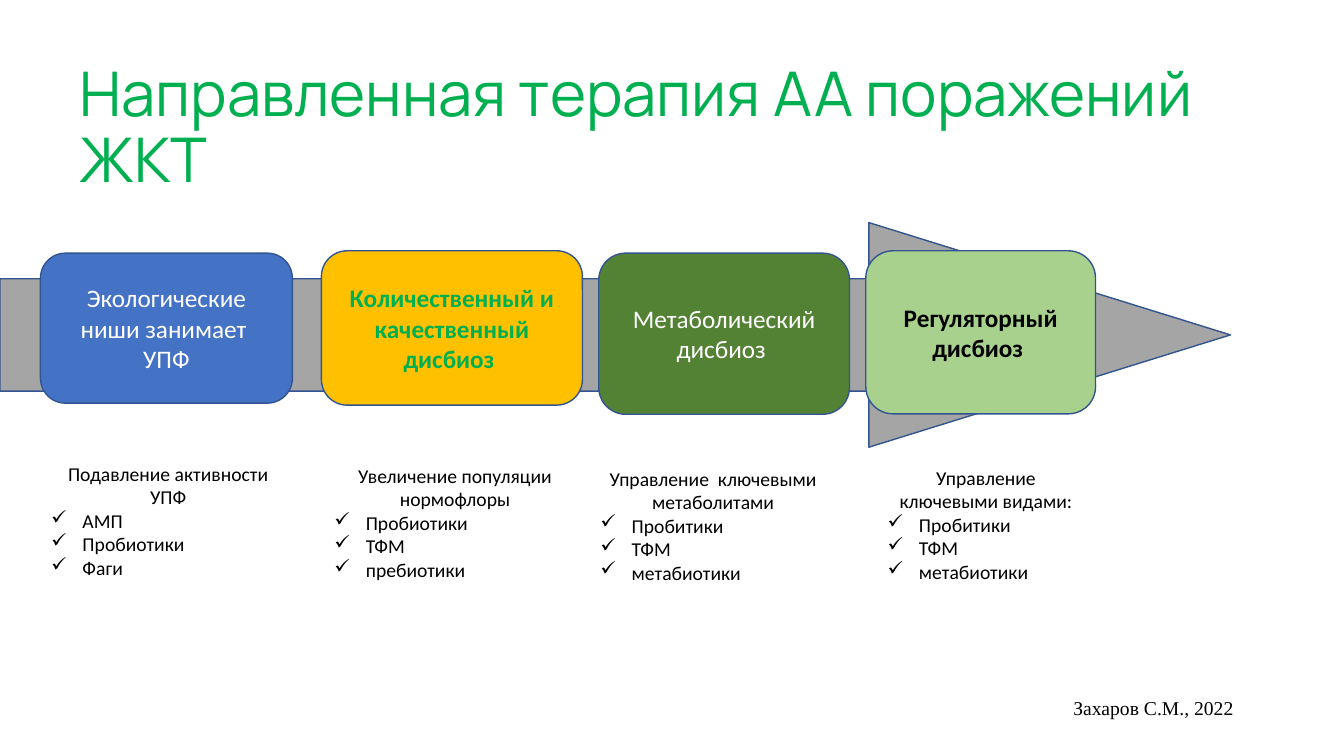
from dataclasses import dataclass

import pptx
import pptx.dml.color
import pptx.enum.shapes
import pptx.enum.text
import pptx.oxml
import pptx.oxml.ns
import pptx.util
from pptx.util import Cm

SHAPE = pptx.enum.shapes.MSO_SHAPE
ALIGN = pptx.enum.text.PP_ALIGN
ANCHOR = pptx.enum.text.MSO_ANCHOR
FIT = pptx.enum.text.MSO_AUTO_SIZE


@dataclass(frozen=True)
class Theme:
    green: str = "00B050"
    black: str = "000000"
    white: str = "FFFFFF"
    gray: str = "A5A5A5"
    outline: str = "325491"
    blue: str = "4472C4"
    amber: str = "FFC000"
    forest: str = "548235"
    mint: str = "A9D18E"
    title_size: int = 44
    stage_size: int = 18
    body_size: int = 14
    title_font: str = "Manrope"
    body_font: str = "Calibri"
    author_font: str = "Times New Roman"


THEME = Theme()

STAGES = [
    ((1.02, 6.38, 6.35, 3.78), THEME.blue, THEME.white, False,
     "Экологические ниши занимает  УПФ"),
    ((8.1, 6.32, 6.58, 3.89), THEME.amber, THEME.green, True,
     "Количественный и качественный дисбиоз "),
    ((15.09, 6.38, 6.32, 4.06), THEME.forest, THEME.white, False,
     "Метаболический дисбиоз "),
    ((21.82, 6.32, 5.79, 4.11), THEME.mint, THEME.black, True,
     "Регуляторный дисбиоз "),
]

THERAPIES = [
    ((1.04, 11.51, 6.4, 3.25), ["Подавление активности УПФ"],
     ["АМП", "Пробиотики", "Фаги"]),
    ((8.18, 11.56, 6.58, 3.25), ["Увеличение популяции нормофлоры"],
     ["Пробиотики", "ТФМ", "пребиотики"]),
    ((14.88, 11.63, 6.3, 3.25), ["Управление  ключевыми ", "метаболитами "],
     ["Пробитики", "ТФМ", "метабиотики"]),
    ((22.12, 11.61, 5.46, 3.25), ["Управление ключевыми видами:"],
     ["Пробитики", "ТФМ", "метабиотики"]),
]


def rgb(code):
    return pptx.dml.color.RGBColor.from_string(code)


def add_span(para, text, size, color, font=THEME.body_font, bold=False):
    span = para.add_run()
    span.text = text
    span.font.size = pptx.util.Pt(size)
    span.font.name = font
    span.font.bold = bold
    span.font.color.rgb = rgb(color)


def add_shape(page, kind, place, fill):
    shape = page.shapes.add_shape(kind, *map(Cm, place))
    shape.shadow.inherit = False
    shape.fill.solid()
    shape.fill.fore_color.rgb = rgb(fill)
    shape.line.color.rgb = rgb(THEME.outline)
    shape.line.width = pptx.util.Pt(1)
    return shape


def add_text_box(page, place, wrap=True):
    frame = page.shapes.add_textbox(*map(Cm, place)).text_frame
    frame.word_wrap = wrap
    return frame


def add_title(page):
    frame = add_text_box(page, (1.75, 1.42, 29.21, 3.68))
    frame.vertical_anchor = ANCHOR.MIDDLE
    para = frame.paragraphs[0]
    para.line_spacing = 0.9
    add_span(para, "Направленная терапия АА поражений ЖКТ",
             THEME.title_size, THEME.green, THEME.title_font)


def add_arrow(page):
    arrow = add_shape(page, SHAPE.RIGHT_ARROW, (0, 5.61, 31.01, 5.66), THEME.gray)
    arrow.adjustments[0] = 0.5
    arrow.adjustments[1] = 1.61


def add_stage(page, place, fill, color, bold, text):
    box = add_shape(page, SHAPE.ROUNDED_RECTANGLE, place, fill)
    box.text_frame.word_wrap = True
    box.text_frame.vertical_anchor = ANCHOR.MIDDLE
    para = box.text_frame.paragraphs[0]
    para.alignment = ALIGN.CENTER
    add_span(para, text, THEME.stage_size, color, bold=bold)


def add_check_mark(para):
    properties = para._p.get_or_add_pPr()
    properties.set("marL", str(Cm(0.79)))
    properties.set("indent", str(-Cm(0.79)))
    bullet = pptx.oxml.parse_xml(
        f'<a:buChar {pptx.oxml.ns.nsdecls("a")} char="✓"/>')
    properties.append(bullet)


def add_therapy(page, place, heading, remedies):
    frame = add_text_box(page, place)
    frame.auto_size = FIT.SHAPE_TO_FIT_TEXT
    for index, text in enumerate(heading + remedies):
        para = frame.add_paragraph() if index else frame.paragraphs[0]
        if index < len(heading):
            para.alignment = ALIGN.CENTER
        else:
            add_check_mark(para)
        add_span(para, text, THEME.body_size, THEME.black)


def add_author(page):
    frame = add_text_box(page, (26.8, 17.42, 4.7, 0.86), wrap=False)
    frame.auto_size = FIT.SHAPE_TO_FIT_TEXT
    add_span(frame.paragraphs[0], "Захаров С.М., 2022",
             THEME.body_size, THEME.black, THEME.author_font)


def main():
    deck = pptx.Presentation()
    deck.slide_width, deck.slide_height = Cm(33.87), Cm(19.05)
    page = deck.slides.add_slide(deck.slide_layouts[6])
    add_title(page)
    add_arrow(page)
    for stage in STAGES:
        add_stage(page, *stage)
    for therapy in THERAPIES:
        add_therapy(page, *therapy)
    add_author(page)
    deck.save("out.pptx")


if __name__ == "__main__":
    main()
